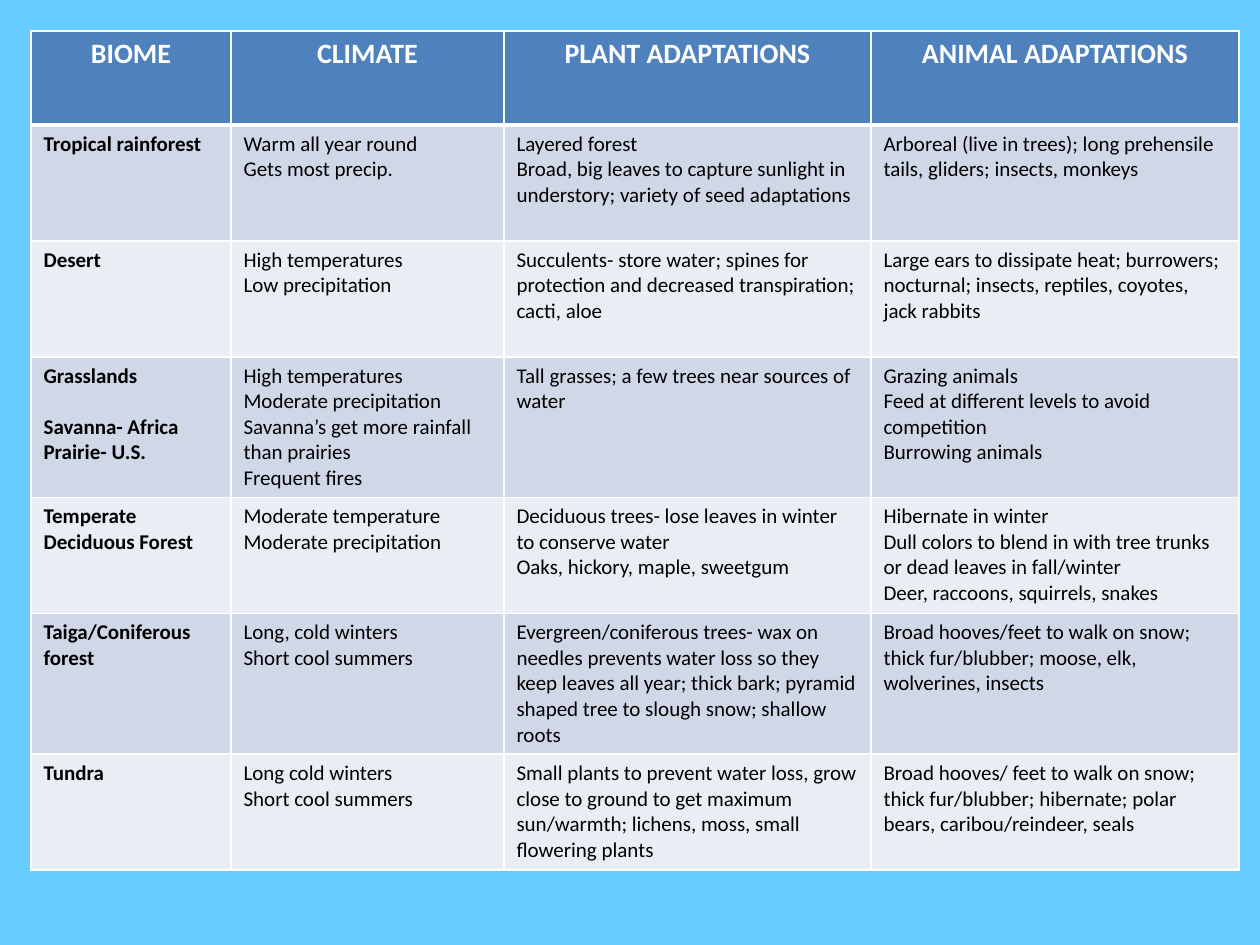
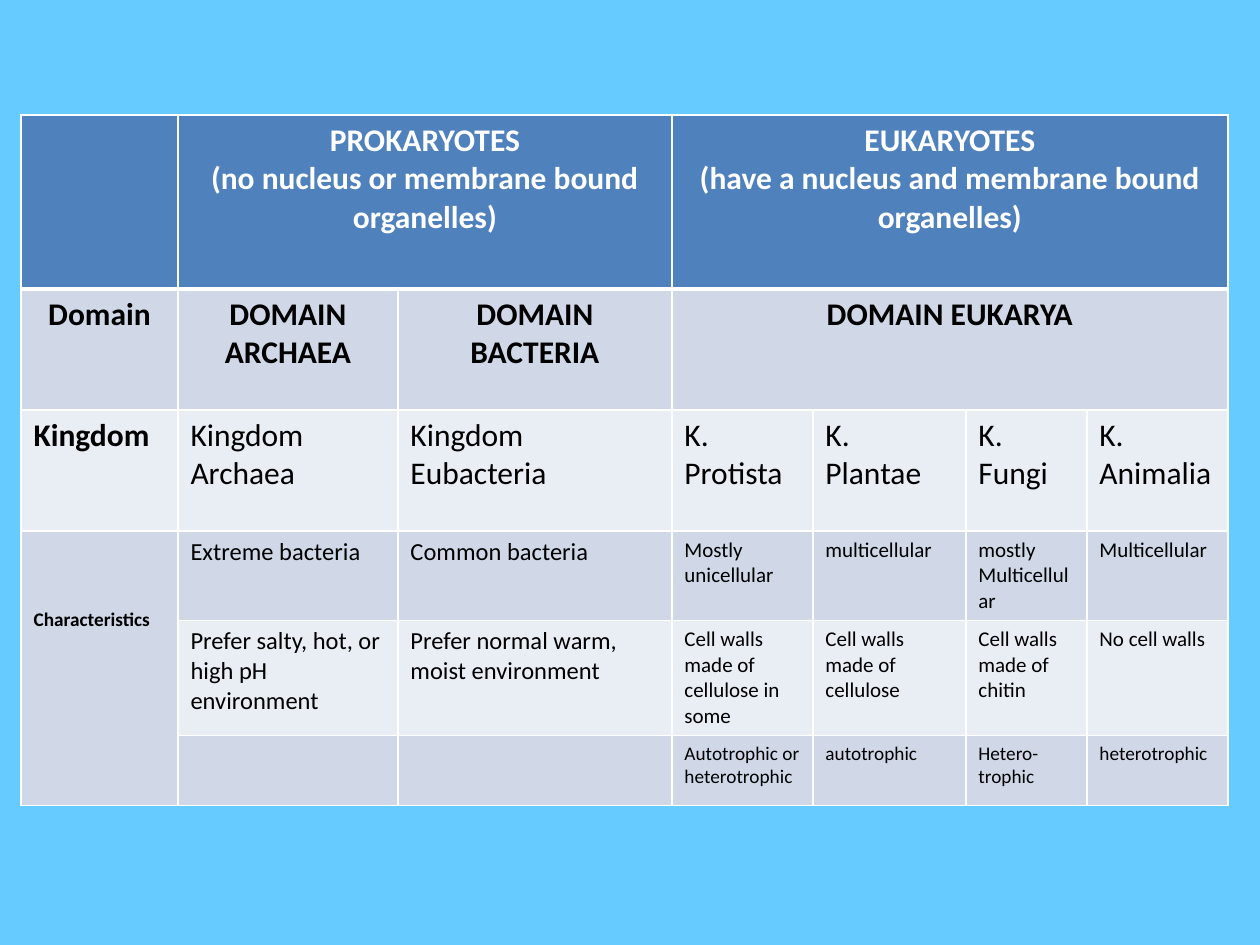
from lxml.etree import SubElement
from pptx import Presentation
from pptx.dml.color import RGBColor
from pptx.enum.text import PP_ALIGN
from pptx.oxml.ns import qn
from pptx.util import Emu, Pt

SCALE = 914400 / 126
SKY = RGBColor(0x66, 0xCC, 0xFF)
HEAD = RGBColor(0x4F, 0x81, 0xBD)
BANDS = RGBColor(0xD0, 0xD8, 0xE8), RGBColor(0xE9, 0xED, 0xF4)
WHITE = RGBColor(0xFF, 0xFF, 0xFF)
BLACK = RGBColor(0, 0, 0)
FONT = "Calibri"

BIOMES = [
    ["BIOME", "CLIMATE", "PLANT ADAPTATIONS", "ANIMAL ADAPTATIONS"],
    ["Tropical rainforest",
     "Warm all year round\nGets most precip.",
     "Layered forest\nBroad, big leaves to capture sunlight in understory; "
     "variety of seed adaptations",
     "Arboreal (live in trees); long prehensile tails, gliders; insects, monkeys"],
    ["Desert",
     "High temperatures\nLow precipitation",
     "Succulents- store water; spines for protection and decreased "
     "transpiration; cacti, aloe",
     "Large ears to dissipate heat; burrowers; nocturnal; insects, reptiles, "
     "coyotes, jack rabbits"],
    ["Grasslands\nSavanna- Africa\nPrairie- U.S.",
     "High temperatures\nModerate precipitation\n"
     "Savanna’s get more rainfall than prairies\nFrequent fires",
     "Tall grasses; a few trees near sources of water",
     "Grazing animals\nFeed at different levels to avoid competition\n"
     "Burrowing animals"],
    ["Temperate Deciduous Forest",
     "Moderate temperature\nModerate precipitation",
     "Deciduous trees- lose leaves in winter to conserve water\n"
     "Oaks, hickory, maple, sweetgum",
     "Hibernate in winter\nDull colors to blend in with tree trunks or dead "
     "leaves in fall/winter\nDeer, raccoons, squirrels, snakes"],
    ["Taiga/Coniferous forest",
     "Long, cold winters\nShort cool summers",
     "Evergreen/coniferous trees- wax on needles prevents water loss so they "
     "keep leaves all year; thick bark; pyramid shaped tree to slough snow; "
     "shallow roots",
     "Broad hooves/feet to walk on snow; thick fur/blubber; moose, elk, "
     "wolverines, insects"],
    ["Tundra",
     "Long cold winters\nShort cool summers",
     "Small plants to prevent water loss, grow close to ground to get maximum "
     "sun/warmth; lichens, moss, small flowering plants",
     "Broad hooves/ feet to walk on snow; thick fur/blubber; hibernate; polar "
     "bears, caribou/reindeer, seals"],
]

KINGDOMS = [
    ["", "PROKARYOTES\n(no nucleus or membrane bound organelles)", "",
     "EUKARYOTES\n(have a nucleus and membrane bound organelles)", "", "", ""],
    ["Domain", "DOMAIN ARCHAEA", "DOMAIN BACTERIA", "DOMAIN EUKARYA", "", "", ""],
    ["Kingdom", "Kingdom Archaea", "Kingdom\nEubacteria", "K. Protista",
     "K.\nPlantae", "K.\nFungi", "K. Animalia"],
    ["Characteristics", "Extreme bacteria", "Common bacteria",
     "Mostly unicellular", "multicellular", "mostly\nMulticellular",
     "Multicellular"],
    ["", "Prefer salty, hot, or high pH environment",
     "Prefer normal warm, moist environment",
     "Cell walls made of cellulose in some", "Cell walls made of cellulose",
     "Cell walls made of chitin", "No cell walls"],
    ["", "", "", "Autotrophic or heterotrophic", "autotrophic",
     "Hetero-trophic", "heterotrophic"],
]
SPANS = [(0, 1, 0, 2), (0, 3, 0, 6), (1, 3, 1, 6), (3, 0, 5, 0)]


def px(n):
    return Emu(round(n * SCALE))


def edge(cell, row):
    """Rule the cell in white, with a heavy line under the header row."""
    props = cell._tc.get_or_add_tcPr()
    heavy = {0: "lnB", 1: "lnT"}.get(row)
    for tag in ("lnL", "lnR", "lnT", "lnB"):
        line = SubElement(props, qn("a:" + tag), w=str(Pt(3 if tag == heavy else 1)))
        fill = SubElement(line, qn("a:solidFill"))
        SubElement(fill, qn("a:srgbClr"), val=str(WHITE))


def write(cell, text, size, bold, mid, color):
    cell.text_frame.text = text
    for para in cell.text_frame.paragraphs:
        font = para.font
        font.name, font.size, font.bold = FONT, Pt(size), bold
        font.color.rgb = color
        para.alignment = PP_ALIGN.CENTER if mid else PP_ALIGN.LEFT


def grid(slide, left, top, cols, rows, texts, style, spans=()):
    """Draw a banded table; style(row, col) gives size, bold and centred."""
    frame = slide.shapes.add_table(len(rows), len(cols), px(left), px(top),
                                   px(sum(cols)), px(sum(rows)))
    table = frame.table
    for col, width in zip(table.columns, cols):
        col.width = px(width)
    for row, height in zip(table.rows, rows):
        row.height = px(height)
    for r, line in enumerate(texts):
        for c, text in enumerate(line):
            cell = table.cell(r, c)
            edge(cell, r)
            cell.fill.solid()
            cell.fill.fore_color.rgb = BANDS[(r - 1) % 2] if r else HEAD
            if text:
                write(cell, text, *style(r, c), BLACK if r else WHITE)
    for r, c, end, last in spans:
        table.cell(r, c).merge(table.cell(end, last))
    return table


def biome_style(r, c):
    return (12, c == 0, False) if r else (16, True, True)


def kingdom_style(r, c):
    if r < 3:
        return 18, r < 2 or c == 0, r < 2
    if c == 0 or r == 5:
        return 11, c == 0, False
    return 14 if c < 3 else 12, False, False


def biomes(slide):
    table = grid(slide, 31, 31, [200, 273, 367, 368],
                 [94, 116, 116, 139, 116, 139, 116], BIOMES, biome_style)
    table.cell(3, 0).text_frame.paragraphs[1].space_before = Pt(14.6)


def kingdoms(slide):
    table = grid(slide, 21, 115, [157, 220, 274, 141, 153, 121, 141],
                 [174, 121, 121, 89, 114, 70], KINGDOMS, kingdom_style, SPANS)
    table.cell(3, 0).margin_top = px(77)


def main():
    deck = Presentation()
    deck.slide_width, deck.slide_height = px(1260), px(945)
    for draw in (biomes, kingdoms):
        slide = deck.slides.add_slide(deck.slide_layouts[6])
        slide.background.fill.solid()
        slide.background.fill.fore_color.rgb = SKY
        draw(slide)
    deck.save("out.pptx")


if __name__ == "__main__":
    main()
